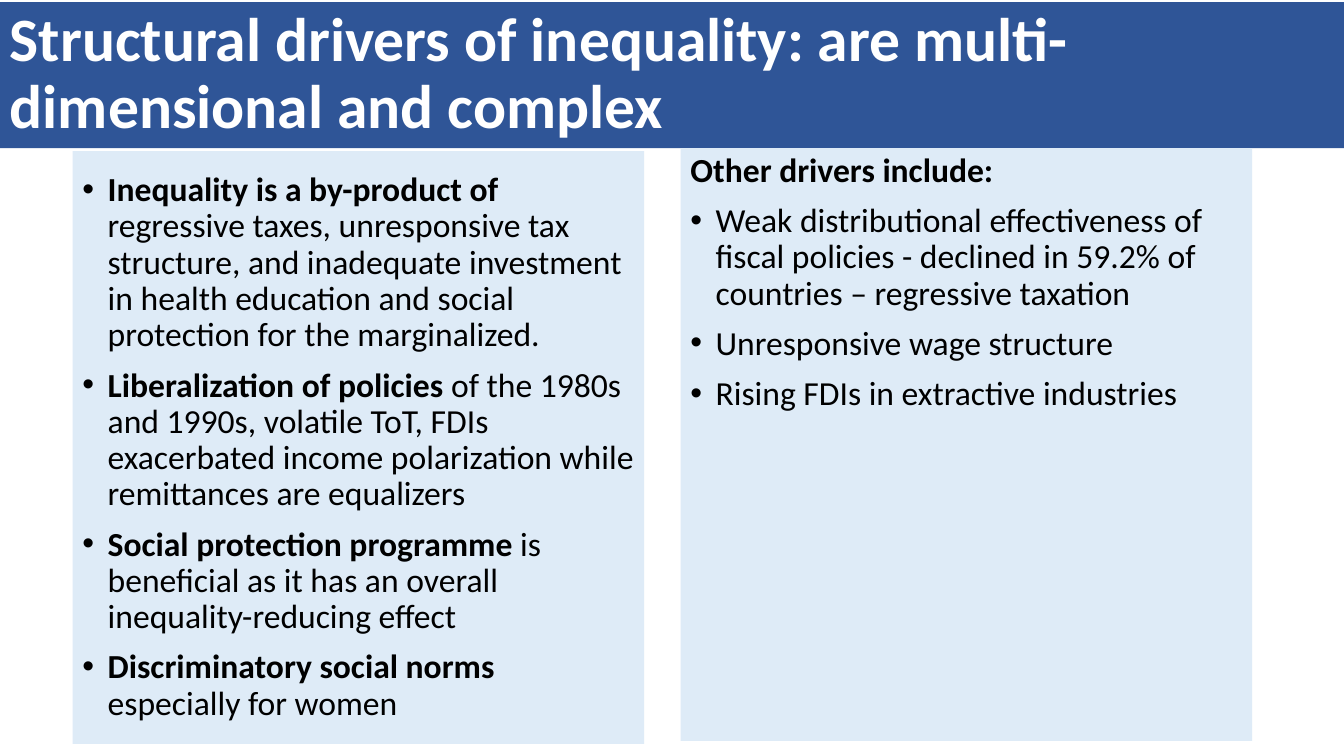
from pptx import Presentation
from pptx.dml.color import RGBColor
from pptx.enum.text import MSO_ANCHOR as Anchor
from pptx.oxml.ns import qn
from pptx.util import Inches, Pt
from lxml.etree import SubElement

COLORS = {"banner": "2F5597", "panel": "DEEBF7", "white": "FFFFFF", "black": "000000"}


class SlideBuilder:
    font = "Calibri"
    line_spacing = 0.9
    indent = Inches(0.25)

    def __init__(self, slide):
        self.s = slide

    def box(self, x, y, w, h, fill, anchor):
        """Add a filled text box and return its text frame."""
        sp = self.s.shapes.add_textbox(Inches(x), Inches(y), Inches(w), Inches(h))
        sp.fill.solid()
        sp.fill.fore_color.rgb = RGBColor.from_string(COLORS[fill])
        tf = sp.text_frame
        tf.word_wrap = True
        tf.vertical_anchor = anchor
        return tf

    def add_runs(self, p, runs, size, color):
        """Fill a paragraph with (text, bold) runs."""
        p.line_spacing = self.line_spacing
        for text, bold in runs:
            r = p.add_run()
            r.text = text
            r.font.name = self.font
            r.font.size = Pt(size)
            r.font.bold = bold
            r.font.color.rgb = RGBColor.from_string(COLORS[color])

    def bullet(self, p):
        pPr = p._p.get_or_add_pPr()
        pPr.set("marL", str(self.indent))
        pPr.set("indent", str(-self.indent))
        SubElement(pPr, qn("a:buFont")).set("typeface", "Arial")
        SubElement(pPr, qn("a:buChar")).set("char", "•")

    def title(self, text):
        tf = self.box(0, 0.02, 13.33, 1.45, "banner", Anchor.MIDDLE)
        self.add_runs(tf.paragraphs[0], [(text, True)], 44, "white")

    def panel(self, x, y, anchor, items, heading=None):
        """Add a panel of (bold lead, plain rest) bullets under an optional heading."""
        tf = self.box(x, y, 5.67, 5.88, "panel", anchor)
        rows = [(heading, "")] if heading else []
        for i, (lead, rest) in enumerate(rows + items):
            p = tf.paragraphs[0] if i == 0 else tf.add_paragraph()
            p.space_before = Pt(10)
            runs = [(text, bold) for text, bold in ((lead, True), (rest, False)) if text]
            self.add_runs(p, runs, 24, "black")
            if i >= len(rows):
                self.bullet(p)


def main():
    prs = Presentation()
    prs.slide_width, prs.slide_height = Inches(13.33), Inches(7.5)
    page = SlideBuilder(prs.slides.add_slide(prs.slide_layouts[6]))

    # Title banner
    page.title("Structural drivers of inequality: are multi-dimensional and complex")

    # Main drivers
    page.panel(0.72, 1.5, Anchor.MIDDLE, [
        ("Inequality is a by-product of ",
         "regressive taxes, unresponsive tax structure, and inadequate investment "
         "in health education and social protection for the marginalized."),
        ("Liberalization of policies ",
         "of the 1980s and 1990s, volatile ToT, FDIs exacerbated income polarization "
         "while remittances are equalizers"),
        ("Social protection programme ",
         "is beneficial as it has an overall inequality-reducing effect"),
        ("Discriminatory social norms ", "especially for women"),
    ])

    # Other drivers
    page.panel(6.75, 1.47, Anchor.TOP, [
        ("", "Weak distributional effectiveness of fiscal policies - declined in 59.2% "
             "of countries – regressive taxation"),
        ("", "Unresponsive wage structure"),
        ("", "Rising FDIs in extractive industries"),
    ], heading="Other drivers include:")

    prs.save("out.pptx")


if __name__ == "__main__":
    main()
